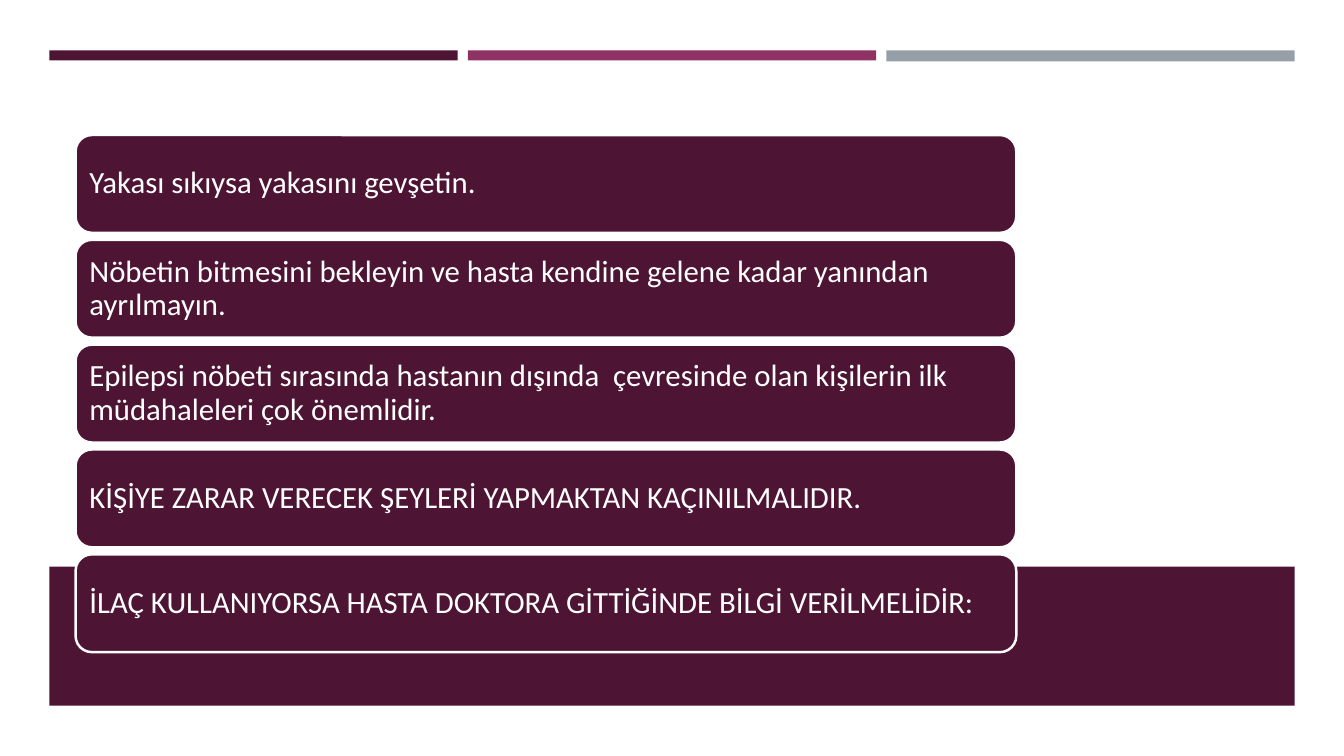
from dataclasses import dataclass

from pptx import Presentation
from pptx import util as u
from pptx.dml.color import RGBColor
from pptx.enum import shapes, text

COLORS = {
    "plum": "4D1434",
    "magenta": "903163",
    "gray": "969FA7",
    "white": "FFFFFF",
}
SLIDE_WIDTH, SLIDE_HEIGHT = 13.33, 7.5
BLANK_LAYOUT = 6
FONT = "Calibri"

MARGIN = 0.49
BAR_TOP, BAR_WIDTH, BAR_PITCH = 0.5, 4.05, 4.15
CARD_LEFT, CARD_TOP, CARD_PITCH = 0.75, 1.34, 1.04
CARD_WIDTH, CARD_HEIGHT = 9.33, 0.97

BARS = [("plum", 0.1), ("magenta", 0.1), ("gray", 0.11)]
ADVICE = [
    "Yakası sıkıysa yakasını gevşetin.",
    "Nöbetin bitmesini bekleyin ve hasta kendine gelene kadar yanından ayrılmayın.",
    "Epilepsi nöbeti sırasında hastanın dışında  çevresinde olan kişilerin ilk müdahaleleri çok önemlidir.",
    "KİŞİYE ZARAR VERECEK ŞEYLERİ YAPMAKTAN KAÇINILMALIDIR.",
    "İLAÇ KULLANIYORSA HASTA DOKTORA GİTTİĞİNDE BİLGİ VERİLMELİDİR:",
]


@dataclass(frozen=True)
class Box:
    left: float
    top: float
    width: float
    height: float
    color: str = "plum"


def rgb(name: str) -> RGBColor:
    return RGBColor.from_string(COLORS[name])


def add_box(slide, box: Box, kind=shapes.MSO_SHAPE.RECTANGLE):
    position = [u.Inches(length) for length in (box.left, box.top, box.width, box.height)]
    shape = slide.shapes.add_shape(kind, *position)
    shape.shadow.inherit = False
    shape.fill.solid()
    shape.fill.fore_color.rgb = rgb(box.color)
    shape.line.fill.background()
    return shape


def add_card(slide, box: Box, advice: str) -> None:
    shape = add_box(slide, box, shapes.MSO_SHAPE.ROUNDED_RECTANGLE)
    shape.line.color.rgb = rgb("white")
    shape.line.width = u.Pt(1.75)
    frame = shape.text_frame
    frame.word_wrap = True
    frame.vertical_anchor = text.MSO_ANCHOR.MIDDLE
    frame.margin_left = frame.margin_right = u.Inches(0.09)
    frame.margin_top = frame.margin_bottom = u.Inches(0.09)
    frame.text = advice
    paragraph = frame.paragraphs[0]
    paragraph.alignment = text.PP_ALIGN.LEFT
    paragraph.line_spacing = 0.9
    font = paragraph.runs[0].font
    font.name = FONT
    font.size = u.Pt(22)
    font.color.rgb = rgb("white")


def main() -> None:
    presentation = Presentation()
    presentation.slide_width = u.Inches(SLIDE_WIDTH)
    presentation.slide_height = u.Inches(SLIDE_HEIGHT)
    slide = presentation.slides.add_slide(presentation.slide_layouts[BLANK_LAYOUT])

    for column, (color, height) in enumerate(BARS):
        add_box(slide, Box(MARGIN + column * BAR_PITCH, BAR_TOP, BAR_WIDTH, height, color))
    add_box(slide, Box(MARGIN, 5.62, SLIDE_WIDTH - 2 * MARGIN, 1.38))
    for row, advice in enumerate(ADVICE):
        top = CARD_TOP + row * CARD_PITCH
        add_card(slide, Box(CARD_LEFT, top, CARD_WIDTH, CARD_HEIGHT), advice)

    presentation.save("out.pptx")


if __name__ == "__main__":
    main()
